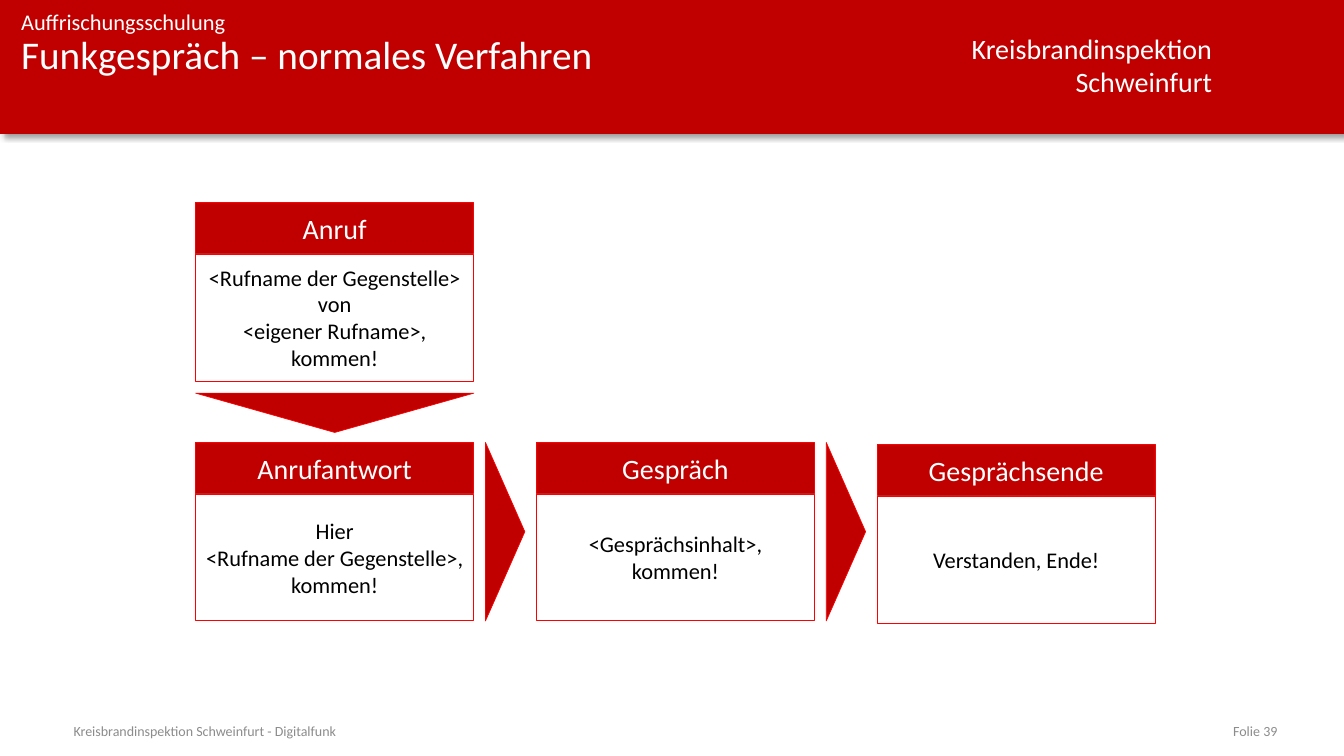
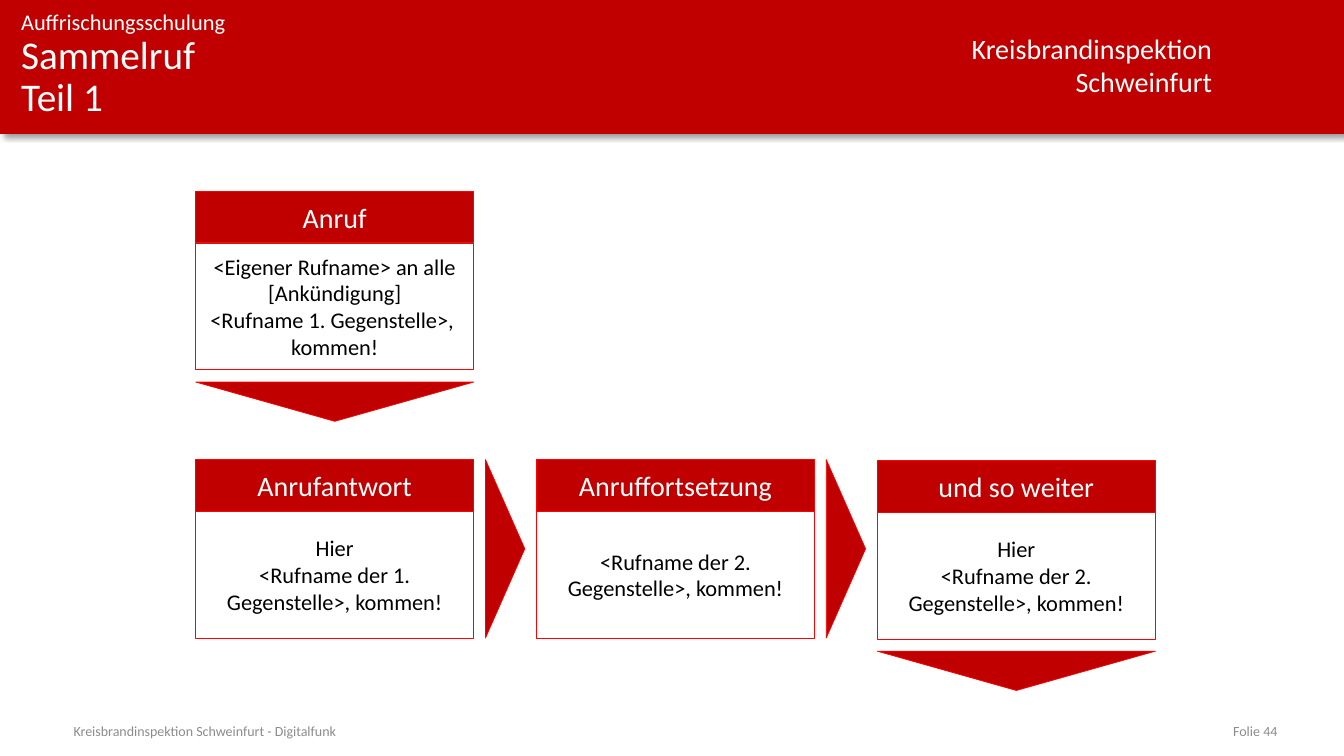
from copy import deepcopy

from lxml import etree
from pptx import Presentation
from pptx.dml.color import RGBColor
from pptx.enum.shapes import MSO_SHAPE
from pptx.enum.text import MSO_ANCHOR, MSO_AUTO_SIZE, PP_ALIGN
from pptx.oxml.ns import qn
from pptx.util import Inches, Pt

COLORS = {
    "band": "C00000",
    "outline": "FF0000",
    "white": "FFFFFF",
    "black": "000000",
    "footer": "8C8C8C",
}
FONT = "Calibri"
SLIDE_WIDTH, SLIDE_HEIGHT = 13.33, 7.5
BAND_HEIGHT = 1.33

# Card grid, in inches
CARD_LEFT, CARD_PITCH = 1.94, 3.38
CARD_WIDTH, HEAD_HEIGHT, BODY_HEIGHT = 2.76, 0.51, 1.26
CARD_HEIGHT = HEAD_HEIGHT + BODY_HEIGHT
ARROW_DEPTH, ARROW_GAP = 0.39, 0.12

# Each card: column, top, heading, body lines. Arrows start from a card's index.
SLIDES = [
    {
        "title": "Funkgespräch – normales Verfahren",
        "number": 39,
        "cards": [
            (0, 2.01, "Anruf", ["<Rufname der Gegenstelle> von", "<eigener Rufname>, kommen!"]),
            (0, 4.39, "Anrufantwort", ["Hier", "<Rufname der Gegenstelle>, kommen!"]),
            (1, 4.39, "Gespräch", ["<Gesprächsinhalt>, kommen!"]),
            (2, 4.41, "Gesprächsende", ["Verstanden, Ende!"]),
        ],
        "down": [0],
        "right": [1, 2],
    },
    {
        "title": "Sammelruf\vTeil 1",
        "number": 44,
        "cards": [
            (0, 1.90, "Anruf", ["<Eigener Rufname> an alle", "[Ankündigung]",
                                "<Rufname 1. Gegenstelle>, ", "kommen!"]),
            (0, 4.56, "Anrufantwort", ["Hier", "<Rufname der 1. Gegenstelle>, kommen!"]),
            (1, 4.56, "Anruffortsetzung", ["<Rufname der 2. Gegenstelle>, kommen!"]),
            (2, 4.57, "und so weiter", ["Hier", "<Rufname der 2. Gegenstelle>, kommen!"]),
        ],
        "down": [0, 3],
        "right": [1, 2],
    },
]


def color(name):
    return RGBColor.from_string(COLORS[name])


def write_text(shape, lines, *, size, ink, align=PP_ALIGN.LEFT,
               anchor=MSO_ANCHOR.TOP, inset=None, line_spacing=None):
    """Fill a shape with one paragraph per line; a vertical tab breaks a line."""
    frame = shape.text_frame
    frame.word_wrap = True
    frame.auto_size = MSO_AUTO_SIZE.NONE
    frame.vertical_anchor = anchor
    if inset is not None:
        frame.margin_left = frame.margin_right = Inches(inset)
        frame.margin_top = frame.margin_bottom = Inches(inset)
    for index, line in enumerate(lines):
        paragraph = frame.add_paragraph() if index else frame.paragraphs[0]
        paragraph.text = line
        paragraph.alignment = align
        if line_spacing:
            paragraph.line_spacing = line_spacing
        for run in paragraph.runs:
            run.font.name = FONT
            run.font.size = Pt(size)
            run.font.color.rgb = color(ink)
        # Line breaks take the run format, so they keep the line height
        for line_break in paragraph._p.findall(qn("a:br")):
            line_break.insert(0, deepcopy(paragraph.runs[0]._r.rPr))


def add_text(slide, left, top, width, height, lines, **text_format):
    box = slide.shapes.add_textbox(Inches(left), Inches(top), Inches(width), Inches(height))
    write_text(box, lines, **text_format)


def add_block(shapes, kind, left, top, width, height, *, fill="band", outline="outline"):
    shape = shapes.add_shape(kind, Inches(left), Inches(top), Inches(width), Inches(height))
    shape.shadow.inherit = False
    shape.fill.solid()
    shape.fill.fore_color.rgb = color(fill)
    if outline:
        shape.line.color.rgb = color(outline)
        shape.line.width = Pt(0.5)
    else:
        shape.line.fill.background()
    return shape


def add_drop_shadow(shape):
    effects = shape._element.spPr.find(qn("a:effectLst"))
    shadow = etree.SubElement(effects, qn("a:outerShdw"), blurRad=str(Pt(4)),
                              dist=str(Pt(3)), dir=str(45 * 60000), rotWithShape="0")
    ink = etree.SubElement(shadow, qn("a:srgbClr"), val=COLORS["black"])
    etree.SubElement(ink, qn("a:alpha"), val="40000")


def add_frame(slide, title, number):
    """Header band, title and footer shared by all slides."""
    band = add_block(slide.shapes, MSO_SHAPE.RECTANGLE, 0, 0, SLIDE_WIDTH, BAND_HEIGHT,
                     outline=None)
    add_drop_shadow(band)
    placeholder = slide.shapes.title
    placeholder._element.addprevious(band._element)

    add_text(slide, 8.64, 0.26, 3.48, 0.77, ["Kreisbrandinspektion", "Schweinfurt"],
             size=20, ink="white", align=PP_ALIGN.RIGHT)
    add_text(slide, 0.21, 0.08, 8.43, 0.27, ["Auffrischungsschulung"],
             size=16, ink="white", inset=0)

    placeholder.left, placeholder.top = Inches(0.21), Inches(0.35)
    placeholder.width, placeholder.height = Inches(8.43), Inches(0.99)
    write_text(placeholder, [title], size=28, ink="white", inset=0, line_spacing=0.9)

    footer = {"size": 10, "ink": "footer", "anchor": MSO_ANCHOR.MIDDLE, "inset": 0}
    add_text(slide, 0.73, 7.15, 8.05, 0.2,
             ["Kreisbrandinspektion Schweinfurt - Digitalfunk"], **footer)
    add_text(slide, 9.56, 7.15, 3.11, 0.2, [f"Folie {number}"],
             align=PP_ALIGN.RIGHT, **footer)


def column_left(column):
    return CARD_LEFT + column * CARD_PITCH


def add_card(slide, column, top, heading, body):
    shapes = slide.shapes.add_group_shape().shapes
    left = column_left(column)
    centred = {"align": PP_ALIGN.CENTER, "anchor": MSO_ANCHOR.MIDDLE}
    head = add_block(shapes, MSO_SHAPE.RECTANGLE, left, top, CARD_WIDTH, HEAD_HEIGHT)
    write_text(head, [heading], size=20, ink="white", **centred)
    panel = add_block(shapes, MSO_SHAPE.RECTANGLE, left, top + HEAD_HEIGHT,
                      CARD_WIDTH, BODY_HEIGHT, fill="white")
    write_text(panel, body, size=16, ink="black", **centred)


def add_arrow(slide, center_x, center_y, length, rotation):
    arrow = add_block(slide.shapes, MSO_SHAPE.ISOSCELES_TRIANGLE, center_x - length / 2,
                      center_y - ARROW_DEPTH / 2, length, ARROW_DEPTH)
    arrow.rotation = rotation


def add_down_arrow(slide, column, top):
    add_arrow(slide, column_left(column) + CARD_WIDTH / 2,
              top + CARD_HEIGHT + ARROW_GAP + ARROW_DEPTH / 2, CARD_WIDTH, 180)


def add_right_arrow(slide, column, top):
    # Centred in the gap to the next column
    add_arrow(slide, column_left(column) + (CARD_WIDTH + CARD_PITCH) / 2,
              top + CARD_HEIGHT / 2, CARD_HEIGHT, 90)


def main():
    presentation = Presentation()
    presentation.slide_width = Inches(SLIDE_WIDTH)
    presentation.slide_height = Inches(SLIDE_HEIGHT)
    title_only = presentation.slide_layouts[5]

    for content in SLIDES:
        slide = presentation.slides.add_slide(title_only)
        add_frame(slide, content["title"], content["number"])
        cards = content["cards"]
        for card in cards:
            add_card(slide, *card)
        for index in content["down"]:
            add_down_arrow(slide, *cards[index][:2])
        for index in content["right"]:
            add_right_arrow(slide, *cards[index][:2])

    presentation.save("out.pptx")


if __name__ == "__main__":
    main()
